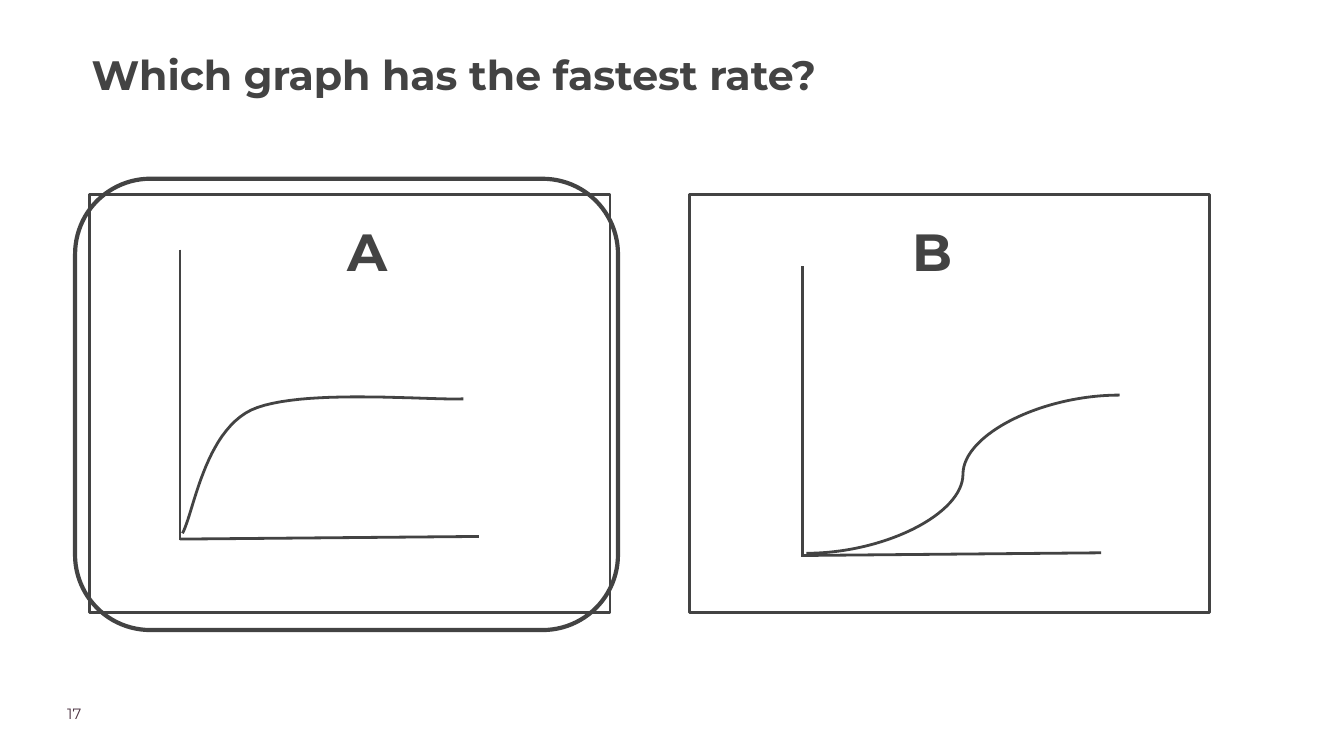
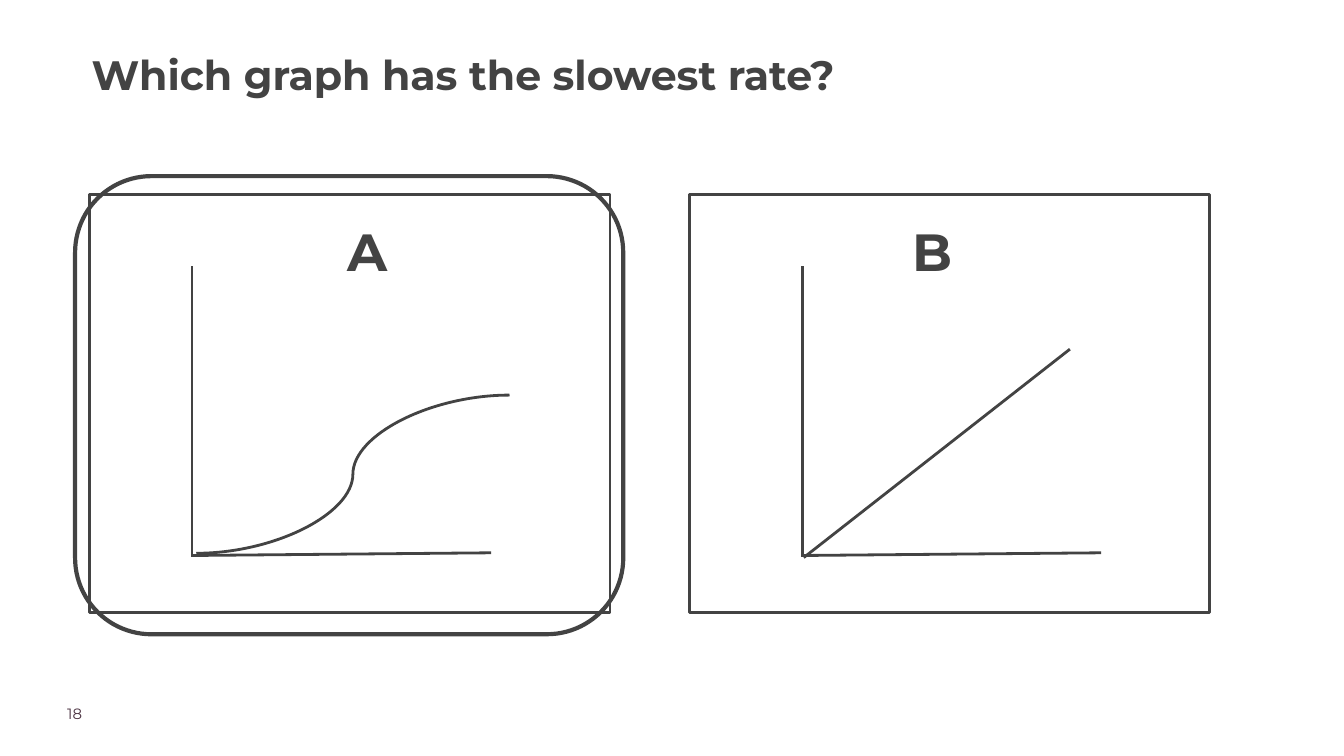
from lxml.etree import SubElement
from pptx import Presentation
from pptx.dml.color import RGBColor
from pptx.enum.shapes import MSO_CONNECTOR, MSO_SHAPE
from pptx.enum.text import MSO_ANCHOR, MSO_AUTO_SIZE, PP_ALIGN
from pptx.oxml.ns import qn
from pptx.util import Cm, Pt

COLORS = {"ink": "434343", "paper": "FFFFFF", "number": "4B3241"}
FONT = "Montserrat"
PANEL_LEFTS = {"A": 1.7, "B": 13.03}
LABEL_LEFTS = {"A": 6.43, "B": 17.12}
PANEL_TOP, PANEL_WIDTH, PANEL_HEIGHT = 3.68, 9.83, 7.9
B_AXIS_LEFT = 15.16


def color(name):
    return RGBColor.from_string(COLORS[name])


def style_line(line, width=1.5):
    line.color.rgb = color("ink")
    line.width = Pt(width)


def write_text(shape, text, size, ink="ink", bold=False, margin=0, spacing=None):
    frame = shape.text_frame
    frame.word_wrap = True
    frame.auto_size = MSO_AUTO_SIZE.NONE
    frame.vertical_anchor = MSO_ANCHOR.TOP
    frame.margin_left = frame.margin_right = Cm(margin)
    frame.margin_top = frame.margin_bottom = Cm(margin)
    frame.text = text
    paragraph = frame.paragraphs[0]
    paragraph.alignment = PP_ALIGN.LEFT
    if spacing:
        paragraph.line_spacing = spacing
    font = paragraph.runs[0].font
    font.name = FONT
    font.size = Pt(size)
    font.bold = bold
    font.color.rgb = color(ink)


def add_text(slide, text, left, top, width, height, **text_format):
    box = slide.shapes.add_textbox(Cm(left), Cm(top), Cm(width), Cm(height))
    write_text(box, text, **text_format)


def add_outline(slide, kind, left, top, width, height, line_width=1.5, fill=None):
    shape = slide.shapes.add_shape(kind, Cm(left), Cm(top), Cm(width), Cm(height))
    shape.shadow.inherit = False
    if fill:
        shape.fill.solid()
        shape.fill.fore_color.rgb = color(fill)
    else:
        shape.fill.background()
    style_line(shape.line, line_width)


def add_line(slide, start, end, kind=MSO_CONNECTOR.STRAIGHT):
    connector = slide.shapes.add_connector(
        kind, *(Cm(value) for value in (*start, *end)))
    style_line(connector.line)
    SubElement(connector._element.spPr, qn("a:effectLst"))


def add_axes(slide, left, top=5.03, bottom=10.52, length=5.65, rise=0.07):
    """Draw a vertical axis and a baseline that climbs slightly to the right."""
    add_line(slide, (left, top), (left, bottom))
    add_line(slide, (left, bottom - 0.02), (left + length, bottom - rise))


def add_s_curve(slide, axis_left):
    start = axis_left + 0.08
    add_line(slide, (start, 10.46), (start + 5.92, 7.47), MSO_CONNECTOR.CURVE)


def bezier_points(start, control_1, control_2, end, steps=24):
    for step in range(1, steps + 1):
        t = step / steps
        weights = ((1 - t) ** 3, 3 * t * (1 - t) ** 2, 3 * t ** 2 * (1 - t), t ** 3)
        yield tuple(
            Cm(sum(weight * value for weight, value in zip(weights, values)))
            for values in zip(start, control_1, control_2, end))


def add_plateau_curve(slide):
    start, bend, end = (3.45, 10.08), (4.75, 7.75), (8.76, 7.54)
    points = [
        *bezier_points(start, (3.66, 9.7), (3.86, 8.18), bend),
        *bezier_points(bend, (5.64, 7.34), (8.1, 7.57), end),
    ]
    builder = slide.shapes.build_freeform(Cm(start[0]), Cm(start[1]))
    builder.add_line_segments(points, close=False)
    curve = builder.convert_to_shape()
    curve.shadow.inherit = False
    curve.fill.background()
    style_line(curve.line)


def add_question_slide(presentation, question, number):
    """Add a slide with the title, the number and the two lettered panels."""
    slide = presentation.slides.add_slide(presentation.slide_layouts[5])
    title = slide.shapes.title
    title.left, title.top = Cm(1.73), Cm(0.79)
    title.width, title.height = Cm(22.86), Cm(2.26)
    write_text(title, question, size=22, bold=True, spacing=1.15)
    add_text(slide, str(number), 1.27, 13.31, 2.01, 0.51, size=8, ink="number")
    for letter, left in PANEL_LEFTS.items():
        add_outline(slide, MSO_SHAPE.RECTANGLE, left, PANEL_TOP,
                    PANEL_WIDTH, PANEL_HEIGHT, fill="paper")
        add_text(slide, letter, LABEL_LEFTS[letter], 4.01, 1.68, 1.3,
                 size=28, bold=True, margin=0.13)
    return slide


def add_answer_ring(slide, top, width, height):
    add_outline(slide, MSO_SHAPE.ROUNDED_RECTANGLE, 1.42, top, width, height,
                line_width=2.25)


def add_fastest_slide(presentation):
    slide = add_question_slide(presentation, "Which graph has the fastest rate?", 17)
    add_axes(slide, 3.4, top=4.72, bottom=10.21)
    add_plateau_curve(slide)
    add_axes(slide, B_AXIS_LEFT)
    add_s_curve(slide, B_AXIS_LEFT)
    add_answer_ring(slide, 3.38, 10.26, 8.53)


def add_slowest_slide(presentation):
    slide = add_question_slide(presentation, "Which graph has the slowest rate?", 18)
    a_axis_left = 3.63
    add_axes(slide, a_axis_left)
    add_s_curve(slide, a_axis_left)
    add_axes(slide, B_AXIS_LEFT)
    add_line(slide, (15.19, 10.54), (20.22, 6.6))
    add_answer_ring(slide, 3.33, 10.36, 8.66)


def main():
    presentation = Presentation()
    presentation.slide_width, presentation.slide_height = Cm(25.4), Cm(14.29)
    add_fastest_slide(presentation)
    add_slowest_slide(presentation)
    presentation.save("out.pptx")


if __name__ == "__main__":
    main()
